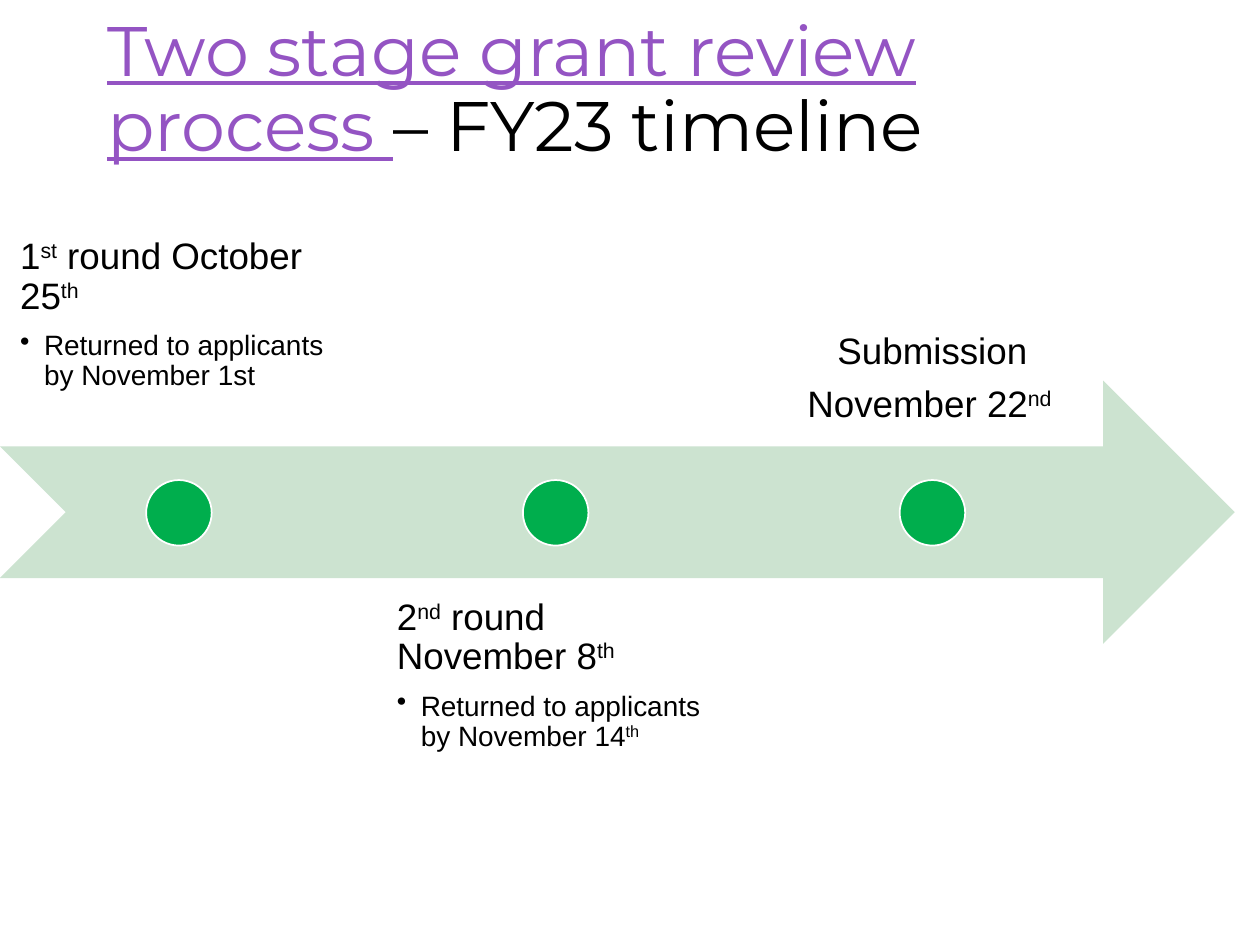
import dataclasses

import pptx
import pptx.dml.color
import pptx.enum.shapes
import pptx.enum.text
import pptx.oxml
import pptx.oxml.ns
import pptx.util

Inches = pptx.util.Inches
Pt = pptx.util.Pt
RGBColor = pptx.dml.color.RGBColor
Shape = pptx.enum.shapes.MSO_SHAPE
Align = pptx.enum.text.PP_ALIGN
Anchor = pptx.enum.text.MSO_ANCHOR


@dataclasses.dataclass(frozen=True)
class Theme:
    title_font: str = "Montserrat"
    body_font: str = "Arial"
    title_size: int = 40
    heading_size: int = 21
    bullet_size: int = 16
    ink: str = "000000"
    white: str = "FFFFFF"
    accent: str = "9454C3"
    arrow: str = "CCE3D0"
    marker: str = "00AE4D"
    line_spacing: float = 0.9
    heading_gap: int = 8
    bullet_gap: int = 3
    inset: float = 0.16
    bullet_indent: float = 0.19


class TimelineSlide:
    def __init__(self, deck, theme):
        self.theme = theme
        self.page = deck.slides.add_slide(deck.slide_layouts[5])

    def add_span(self, para, text, font, size, color):
        span = para.add_run()
        span.text = text
        span.font.name = font
        span.font.size = Pt(size)
        span.font.color.rgb = RGBColor.from_string(color)
        return span

    def title(self, left, top, width, height, linked, rest):
        theme = self.theme
        box = self.page.shapes.title
        box.left, box.top = Inches(left), Inches(top)
        box.width, box.height = Inches(width), Inches(height)
        frame = box.text_frame
        frame.auto_size = pptx.enum.text.MSO_AUTO_SIZE.NONE
        frame.vertical_anchor = Anchor.MIDDLE
        para = frame.paragraphs[0]
        para.alignment = Align.LEFT
        para.line_spacing = theme.line_spacing
        style = (theme.title_font, theme.title_size)
        self.add_span(para, linked, *style, theme.accent).font.underline = True
        self.add_span(para, rest, *style, theme.ink)

    def shape(self, kind, left, top, width, height, fill, line=None):
        item = self.page.shapes.add_shape(
            kind, Inches(left), Inches(top), Inches(width), Inches(height))
        item.shadow.inherit = False
        item.fill.solid()
        item.fill.fore_color.rgb = RGBColor.from_string(fill)
        if line:
            item.line.color.rgb = RGBColor.from_string(line)
            item.line.width = Pt(1)
        else:
            item.line.fill.background()

    def bullet(self, para):
        indent = Inches(self.theme.bullet_indent)
        props = para._p.get_or_add_pPr()
        props.set("marL", str(indent))
        props.set("indent", str(-indent))
        mark = pptx.oxml.parse_xml(
            f'<a:buChar {pptx.oxml.ns.nsdecls("a")} char="•"/>')
        props.append(mark)

    def label(self, left, top, width, height, headings, bullet=(),
              anchor=Anchor.TOP, align=Align.LEFT, bottom=None):
        theme = self.theme
        box = self.page.shapes.add_textbox(
            Inches(left), Inches(top), Inches(width), Inches(height))
        frame = box.text_frame
        frame.word_wrap = True
        frame.vertical_anchor = anchor
        frame.margin_left = frame.margin_right = Inches(theme.inset)
        frame.margin_top = Inches(theme.inset)
        frame.margin_bottom = Inches(bottom or theme.inset)
        rows = [(spans, False) for spans in headings]
        if bullet:
            rows.append((bullet, True))
        for index, (spans, is_bullet) in enumerate(rows):
            para = frame.add_paragraph() if index else frame.paragraphs[0]
            if is_bullet:
                self.bullet(para)
            para.alignment = align
            para.line_spacing = theme.line_spacing
            para.space_after = Pt(
                theme.bullet_gap if is_bullet else theme.heading_gap)
            size = theme.bullet_size if is_bullet else theme.heading_size
            for position, text in enumerate(spans):
                span = self.add_span(para, text, theme.body_font, size, theme.ink)
                if position % 2:
                    span.font._element.set("baseline", "30000")


def main():
    deck = pptx.Presentation()
    deck.slide_width, deck.slide_height = Inches(10), Inches(7.5)
    theme = Theme()
    slide = TimelineSlide(deck, theme)
    slide.title(0.75, 0, 8.62, 1.45,
                "Two stage grant review process ", "– FY23 timeline")
    slide.shape(Shape.NOTCHED_RIGHT_ARROW, 0, 3.02, 9.8, 2.09, theme.arrow)

    step, label_width, label_height, dot = 2.99, 2.84, 2.09, 0.52
    above, below = 1.45, 4.59
    milestones = [
        (above, dict(
            headings=[("1", "st", " round October 25", "th")],
            bullet=("Returned to applicants by November 1st",),
            anchor=Anchor.BOTTOM, bottom=0.43)),
        (below, dict(
            headings=[("2", "nd", " round November 8", "th")],
            bullet=("Returned to applicants by November 14", "th"))),
        (above, dict(
            headings=[("Submission",), ("November 22", "nd ")],
            anchor=Anchor.BOTTOM, align=Align.CENTER)),
    ]
    for index, (top, content) in enumerate(milestones):
        left = index * step
        slide.label(left, top, label_width, label_height, **content)
        slide.shape(Shape.OVAL, left + (label_width - dot) / 2, 3.81,
                    dot, dot, theme.marker, theme.white)
    deck.save("out.pptx")


if __name__ == "__main__":
    main()
